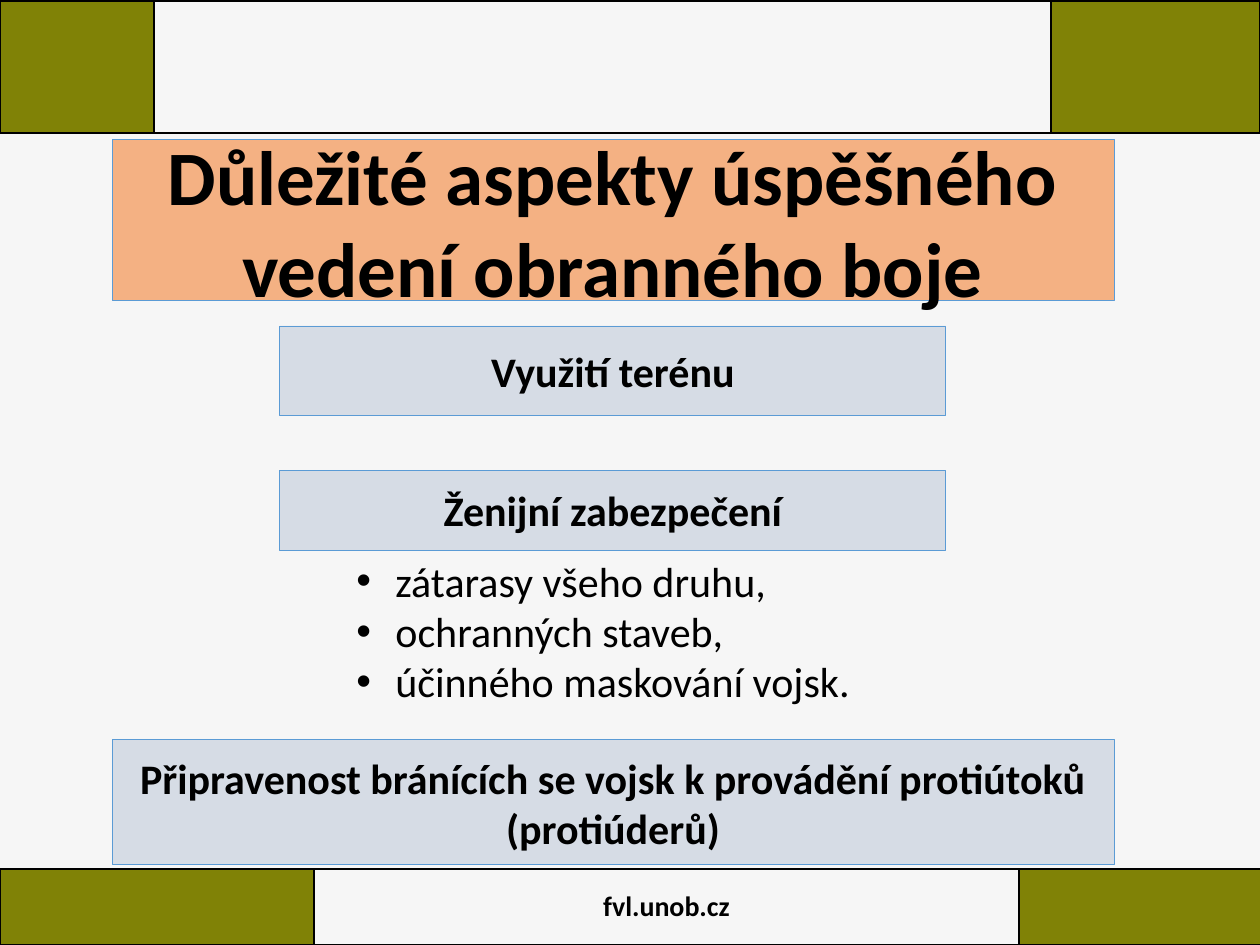
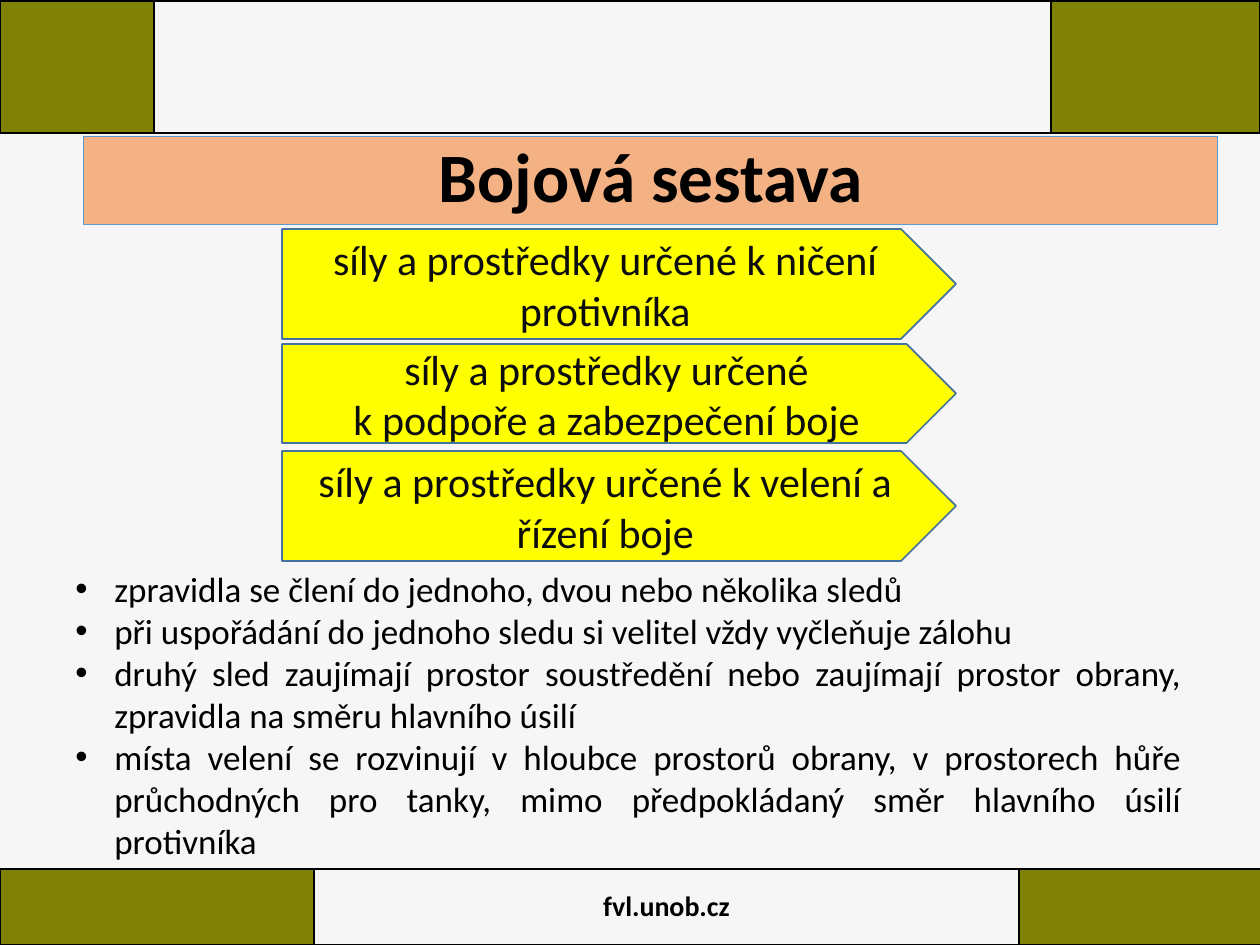
import dataclasses

import lxml.etree
import pptx
import pptx.dml.color
import pptx.enum.shapes
import pptx.enum.text
import pptx.oxml.ns
import pptx.util

PX = 914400 / 126
ALIGN = pptx.enum.text.PP_ALIGN
ANCHOR = pptx.enum.text.MSO_ANCHOR
SHAPE = pptx.enum.shapes.MSO_SHAPE


@dataclasses.dataclass(frozen=True)
class Theme:
    font: str = "Calibri"
    paper: str = "F6F6F6"
    ink: str = "000000"
    arrow_ink: str = "0D0D0D"
    olive: str = "808206"
    title_fill: str = "F4B183"
    aspect_fill: str = "D6DCE5"
    box_line: str = "5B9BD5"
    arrow_fill: str = "FFFF00"
    arrow_line: str = "43739E"
    long_title_size: float = 44
    short_title_size: float = 39.6
    heading_size: float = 24
    body_size: float = 20
    footer_size: float = 16


THEME = Theme()


def px(*lengths):
    return [pptx.util.Emu(round(length * PX)) for length in lengths]


def rgb(code):
    return pptx.dml.color.RGBColor.from_string(code)


def add_bullet(paragraph, indent):
    properties = paragraph._p.get_or_add_pPr()
    properties.set("marL", str(indent))
    properties.set("indent", str(-indent))
    for tag, attribute, value in (("a:buFont", "typeface", "Arial"), ("a:buChar", "char", "•")):
        lxml.etree.SubElement(properties, pptx.oxml.ns.qn(tag)).set(attribute, value)


def write(frame, *lines, size=THEME.heading_size, color=THEME.ink, bold=False,
          align=ALIGN.CENTER, spacing=None, bullet_indent=None):
    """Fill a text frame with one paragraph for each line."""
    frame.word_wrap = True
    for index, line in enumerate(lines):
        paragraph = frame.add_paragraph() if index else frame.paragraphs[0]
        if bullet_indent:
            add_bullet(paragraph, px(bullet_indent)[0])
        paragraph.alignment = align
        if spacing:
            paragraph.line_spacing = spacing
        run = paragraph.add_run()
        run.text = line
        run.font.name = THEME.font
        run.font.size = pptx.util.Pt(size)
        run.font.bold = bold
        run.font.color.rgb = rgb(color)


def add_panel(slide, box, *lines, fill, line=THEME.box_line, line_width=0.5,
              kind=SHAPE.RECTANGLE, **text_format):
    panel = slide.shapes.add_shape(kind, *px(*box))
    panel.shadow.inherit = False
    panel.fill.solid()
    panel.fill.fore_color.rgb = rgb(fill)
    panel.line.color.rgb = rgb(line)
    panel.line.width = pptx.util.Pt(line_width)
    panel.text_frame.vertical_anchor = ANCHOR.MIDDLE
    write(panel.text_frame, *lines, **text_format)


def add_title(slide, box, text, **text_format):
    add_panel(slide, box, text, fill=THEME.title_fill, bold=True, **text_format)


def add_bullets(slide, box, *items, **text_format):
    bullets = slide.shapes.add_textbox(*px(*box))
    bullets.text_frame.auto_size = pptx.enum.text.MSO_AUTO_SIZE.SHAPE_TO_FIT_TEXT
    write(bullets.text_frame, *items, bullet_indent=39, **text_format)


def add_borders(cell):
    properties = cell._tc.get_or_add_tcPr()
    for index, side in enumerate(("lnL", "lnR", "lnT", "lnB")):
        border = lxml.etree.Element(pptx.oxml.ns.qn(f"a:{side}"), w=str(pptx.util.Pt(1)))
        fill = lxml.etree.SubElement(border, pptx.oxml.ns.qn("a:solidFill"))
        lxml.etree.SubElement(fill, pptx.oxml.ns.qn("a:srgbClr")).set("val", THEME.ink)
        properties.insert(index, border)


def add_band(slide, top, height, widths, text=None):
    """Draw a full-width row with olive ends and an open middle."""
    band = slide.shapes.add_table(1, 3, *px(0, top, sum(widths), height)).table
    band.first_row = band.horz_banding = False
    for column, width in zip(band.columns, px(*widths)):
        column.width = width
    left, middle, right = band.rows[0].cells
    middle.fill.background()
    for end in (left, right):
        end.fill.solid()
        end.fill.fore_color.rgb = rgb(THEME.olive)
    for cell in (left, middle, right):
        add_borders(cell)
    if text:
        middle.vertical_anchor = ANCHOR.MIDDLE
        write(middle.text_frame, text, size=THEME.footer_size, bold=True)


def add_framed_slide(deck):
    slide = deck.slides.add_slide(deck.slide_layouts[6])
    add_band(slide, 869, 76, (314, 705, 242), "fvl.unob.cz")
    add_band(slide, 1, 132, (154, 897, 209))
    return slide


def add_aspects(slide, box):
    left, top, width, height = box
    inset = 168
    add_title(slide, (left, top, width, 161),
              "Důležité aspekty úspěšného vedení obranného boje", size=THEME.long_title_size)
    aspects = (
        (inset, 186, 90, "Využití terénu"),
        (inset, 330, 80, "Ženijní zabezpečení"),
        (0, height - 125, 125, "Připravenost bránících se vojsk k provádění protiútoků (protiúderů)"),
    )
    for indent, offset, aspect_height, aspect in aspects:
        add_panel(slide, (left + indent, top + offset, width - 2 * indent, aspect_height),
                  aspect, fill=THEME.aspect_fill, bold=True)
    add_bullets(slide, (left + 232, top + 409, 543, 165),
                "zátarasy všeho druhu,",
                "ochranných staveb,",
                "účinného maskování vojsk.",
                align=ALIGN.LEFT)


def add_force_arrows(slide, box):
    left, top, width, height = box
    forces = (
        (0, 110, ["síly a prostředky určené k ničení protivníka"]),
        (115, 99, ["síly a prostředky určené", "k podpoře a zabezpečení boje"]),
        (height - 110, 110, ["síly a prostředky určené k velení a řízení boje"]),
    )
    for offset, arrow_height, force in forces:
        add_panel(slide, (left, top + offset, width, arrow_height), *force,
                  kind=SHAPE.PENTAGON, fill=THEME.arrow_fill, line=THEME.arrow_line,
                  line_width=1, color=THEME.arrow_ink)


def add_formation(slide, box):
    left, top, width, height = box
    add_title(slide, (left + 21, top, 1134, 89), "Bojová sestava",
              size=THEME.short_title_size, spacing=0.9)
    add_force_arrows(slide, (left + 219, top + 93, 674, 332))
    add_bullets(slide, (left, top + 425, width - 24, height - 425),
                "zpravidla se člení do jednoho, dvou nebo několika sledů",
                "při uspořádání do jednoho sledu si velitel vždy vyčleňuje zálohu",
                "druhý sled zaujímají prostor soustředění nebo zaujímají prostor obrany, "
                "zpravidla na směru hlavního úsilí",
                "místa velení se rozvinují v hloubce prostorů obrany, v prostorech hůře "
                "průchodných pro tanky, mimo předpokládaný směr hlavního úsilí protivníka",
                size=THEME.body_size, align=ALIGN.JUSTIFY)


def main():
    deck = pptx.Presentation()
    deck.slide_width, deck.slide_height = px(1260, 945)
    paper = deck.slide_master.background.fill
    paper.solid()
    paper.fore_color.rgb = rgb(THEME.paper)
    add_aspects(add_framed_slide(deck), (112, 140, 1002, 725))
    add_formation(add_framed_slide(deck), (63, 136, 1155, 735))
    deck.save("out.pptx")


if __name__ == "__main__":
    main()
